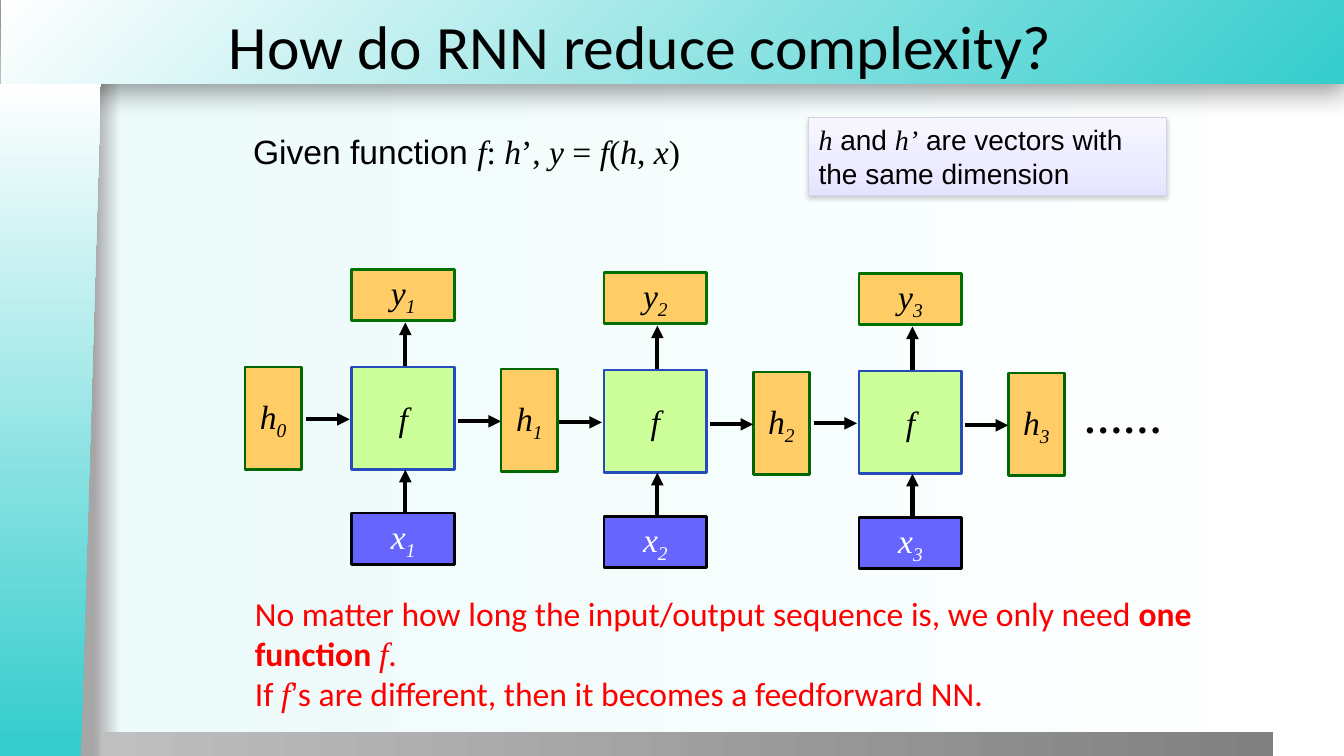
from lxml.etree import SubElement
from pptx import Presentation
from pptx.dml.color import RGBColor
from pptx.enum.shapes import MSO_CONNECTOR, MSO_SHAPE
from pptx.enum.text import MSO_ANCHOR, MSO_AUTO_SIZE, PP_ALIGN
from pptx.oxml.ns import qn
from pptx.util import Inches, Pt

COLORS = {
    "black": "000000", "white": "FFFFFF", "red": "FF0000", "teal": "34CCCC",
    "function": "CCFF99", "function_line": "264BBD", "state": "FFCC66",
    "state_line": "006600", "output_line": "007100", "input": "6666FF",
    "note_line": "D4D3E7", "note_top": "F7F6FF", "note_middle": "ECEBFF",
    "note_bottom": "E5E3FF", "gray": "808080", "silver": "BFBFBF",
    "edge": "A6A6A6", "mist": "EDFBFB",
}
MATH = {"name": "Times New Roman", "italic": True}
UPRIGHT = {"name": "Times New Roman", "italic": False}
SANS = {"name": "Arial"}
PLAIN = {"name": "Calibri"}
STRONG = {"name": "Calibri", "bold": True}
SUBSCRIPT = "-25000"

# Box kinds: fill, line, text colour
FUNCTION = ("function", "function_line", "black")
STATE = ("state", "state_line", "black")
OUTPUT = ("state", "output_line", "black")
INPUT = ("input", "black", "white")

# Left and top of each function box in the chain
STEPS = [(3.49, 3.64), (5.99, 3.67), (8.52, 3.68)]


def rgb(name):
    return RGBColor.from_string(COLORS[name])


def place(shape, left, top, width, height):
    frame = {"left": left, "top": top, "width": width, "height": height}
    for key, value in frame.items():
        setattr(shape, key, Inches(value))


def add_color(parent, name, alpha=100):
    color = SubElement(parent, qn("a:srgbClr"), val=COLORS[name])
    if alpha < 100:
        SubElement(color, qn("a:alpha"), val=str(alpha * 1000))


def set_gradient(owner, fill, stops, angle=0, circle=False):
    fill.gradient()
    gradient = next(owner.element.iter(qn("a:gradFill")))
    for child in list(gradient):
        gradient.remove(child)
    stop_list = SubElement(gradient, qn("a:gsLst"))
    for position, name in stops:
        add_color(SubElement(stop_list, qn("a:gs"), pos=str(position * 1000)), name)
    if circle:
        focus = SubElement(gradient, qn("a:path"), path="circle")
        SubElement(focus, qn("a:fillToRect"), l="100000", t="100000")
    else:
        SubElement(gradient, qn("a:lin"), ang=str(angle * 60000), scaled="0")


def set_shadow(shape, name, alpha, blur, distance):
    effects = shape.element.spPr.find(qn("a:effectLst"))
    shadow = SubElement(effects, qn("a:outerShdw"), blurRad=str(Pt(blur)),
                        dist=str(Pt(distance)), dir="5400000", rotWithShape="0")
    add_color(shadow, name, alpha)


def write(para, spans, size, color):
    for text, look in spans:
        span = para.add_run()
        span.text = text
        for key, value in {"size": Pt(size), **look}.items():
            setattr(span.font, key, value)
        span.font.color.rgb = rgb(color)


def add_rectangle(page, frame, kind=MSO_SHAPE.RECTANGLE):
    box = page.shapes.add_shape(kind, 0, 0, 0, 0)
    place(box, *frame)
    box.shadow.inherit = False
    box.line.fill.background()
    return box


def add_band(page, frame, stops, kind=MSO_SHAPE.RECTANGLE, circle=False):
    band = add_rectangle(page, frame, kind)
    set_gradient(band, band.fill, stops, circle=circle)
    page.shapes.element.insert(2, band.element)
    return band


def add_node(page, frame, kind, letter, index=""):
    fill, line, color = kind
    node = add_rectangle(page, frame)
    node.fill.solid()
    node.fill.fore_color.rgb = rgb(fill)
    node.line.color.rgb = rgb(line)
    node.line.width = Pt(2)
    node.text_frame.vertical_anchor = MSO_ANCHOR.MIDDLE
    para = node.text_frame.paragraphs[0]
    para.alignment = PP_ALIGN.CENTER
    write(para, [(letter, MATH)], 24, color)
    if index:
        write(para, [(index, MATH)], 24, color)
        para.runs[1].font._element.set("baseline", SUBSCRIPT)


def add_arrow(page, *ends):
    arrow = page.shapes.add_connector(MSO_CONNECTOR.STRAIGHT, *map(Inches, ends))
    arrow.line.color.rgb = rgb("black")
    arrow.line.width = Pt(3)
    SubElement(arrow.line._get_or_add_ln(), qn("a:tailEnd"), type="triangle")
    SubElement(arrow.element.spPr, qn("a:effectLst"))


def add_text(page, frame, paragraphs, size, color):
    box = page.shapes.add_textbox(0, 0, 0, 0)
    place(box, *frame)
    box.text_frame.word_wrap = True
    for number, spans in enumerate(paragraphs):
        para = box.text_frame.add_paragraph() if number else box.text_frame.paragraphs[0]
        write(para, spans, size, color)


def fill_placeholder(box, frame, spans, size, anchor):
    place(box, *frame)
    settings = {"auto_size": MSO_AUTO_SIZE.NONE, "vertical_anchor": anchor, "word_wrap": True}
    for key, value in settings.items():
        setattr(box.text_frame, key, value)
    para = box.text_frame.paragraphs[0]
    para.alignment = PP_ALIGN.LEFT
    write(para, spans, size, "black")
    properties = para._p.get_or_add_pPr()
    properties.set("marL", "0")
    properties.set("indent", "0")
    SubElement(properties, qn("a:buNone"))


def add_backdrop(page):
    set_gradient(page, page.background.fill, [(7, "edge"), (9, "mist"), (100, "white")])
    # Each band goes behind the one before it
    add_band(page, (1, 7.26, 11.63, 0.25), [(0, "silver"), (100, "gray")])
    side = add_band(page, (-2.84, 3.67, 6.68, 1), [(1, "teal"), (100, "white")],
                    MSO_SHAPE.FLOWCHART_MANUAL_INPUT)
    side.rotation = 270
    side.element.spPr.find(qn("a:xfrm")).set("flipV", "1")
    top = add_band(page, (0.01, 0, 13.34, 0.83), [(0, "teal"), (100, "white")], circle=True)
    set_shadow(top, "black", 40, 20, 6)


def add_step(page, number, left, top):
    index = str(number)
    add_node(page, (left, top, 1.02, 1.02), FUNCTION, "f")
    add_node(page, (left + 1.48, top + 0.02, 0.56, 1.02), STATE, "h", index)
    add_node(page, (left, top - 0.97, 1.02, 0.51), OUTPUT, "y", index)
    add_node(page, (left, top + 1.45, 1.02, 0.51), INPUT, "x", index)
    middle = left + 0.53
    add_arrow(page, left - 0.45, top + 0.52, left - 0.02, top + 0.52)
    add_arrow(page, left + 1.05, top + 0.54, left + 1.48, top + 0.54)
    add_arrow(page, middle, top - 0.01, middle, top - 0.44)
    add_arrow(page, middle, top + 1.45, middle, top + 1.02)


def add_note(page):
    note = add_rectangle(page, (8.02, 1.17, 3.55, 0.77))
    set_gradient(note, note.fill, [(0, "note_top"), (65, "note_middle"), (100, "note_bottom")], 90)
    note.line.color.rgb = rgb("note_line")
    note.line.width = Pt(0.75)
    set_shadow(note, "gray", 38, 3.1, 1.6)
    note.text_frame.vertical_anchor = MSO_ANCHOR.TOP
    para = note.text_frame.paragraphs[0]
    para.alignment = PP_ALIGN.LEFT
    write(para, [("h", MATH), (" and ", SANS), ("h’", MATH),
                 (" are vectors with the same dimension", SANS)], 20, "black")


def main():
    deck = Presentation()
    deck.slide_width, deck.slide_height = Inches(13.33), Inches(7.5)
    page = deck.slides.add_slide(deck.slide_layouts[1])
    add_backdrop(page)

    # Title and definition
    title, body = page.placeholders
    fill_placeholder(title, (2.17, 0, 9, 0.89),
                     [("How do RNN reduce complexity?", PLAIN)], 44, MSO_ANCHOR.MIDDLE)
    fill_placeholder(body, (2.41, 1.25, 9.17, 5.42), [
        ("Given function ", SANS), ("f", MATH), (": ", UPRIGHT), ("h", MATH),
        ("’, ", UPRIGHT), ("y ", MATH), ("= ", UPRIGHT), ("f", MATH), ("(", UPRIGHT),
        ("h", MATH), (", ", UPRIGHT), ("x", MATH), (")", UPRIGHT)], 24, MSO_ANCHOR.TOP)

    # Recurrent chain
    add_node(page, (2.43, 3.64, 0.56, 1.02), STATE, "h", "0")
    for number, (left, top) in enumerate(STEPS, 1):
        add_step(page, number, left, top)
    add_text(page, (10.65, 3.86, 1.02, 0.57), [[("……", {**UPRIGHT, "bold": True})]], 28, "black")

    # Conclusion and side note
    add_text(page, (2.43, 5.83, 9.73, 1.31), [
        [("No matter how long the input/output sequence is, we only need ", PLAIN),
         ("one function ", STRONG), ("f", MATH), (".", PLAIN)],
        [("If ", PLAIN), ("f", MATH), ("’", SANS),
         ("s are different, then it becomes a feedforward NN.", PLAIN)]], 24, "red")
    add_note(page)
    deck.save("out.pptx")


if __name__ == "__main__":
    main()
